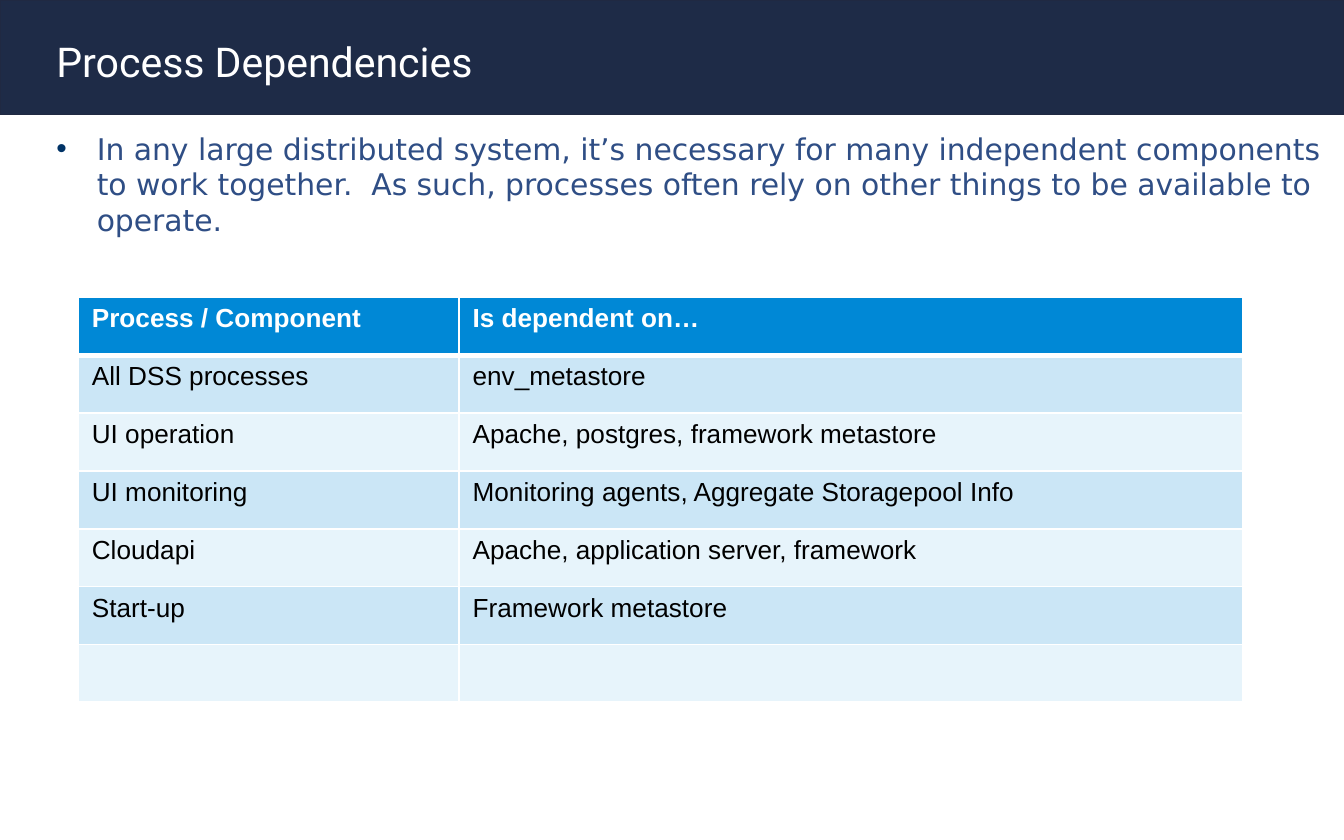
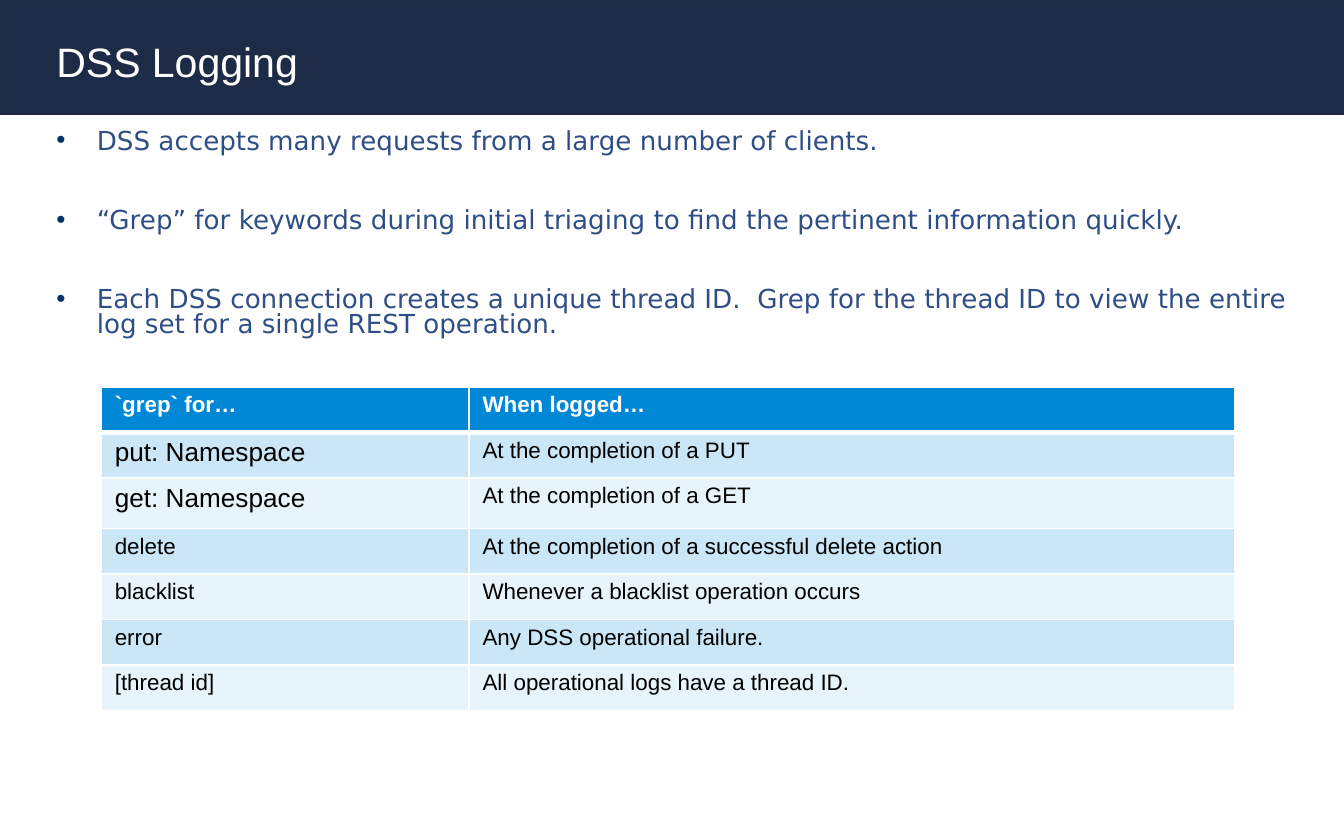
from lxml.etree import SubElement as Sub
from pptx import Presentation
from pptx.dml.color import RGBColor
from pptx.enum.shapes import MSO_SHAPE as Shape
from pptx.enum.text import MSO_ANCHOR as Anchor
from pptx.oxml.ns import qn
from pptx.util import Pt

WIDTH, HEIGHT = 720, 450
LEFT = 30.24
INDENT = 21.6
NAVY, EDGE, WHITE, BLACK = "1E2B47", "202942", "FFFFFF", "000000"
BODY, DOT = "2F4E85", "003366"
HEAD, BANDS = "0088D6", ("E7F4FB", "CBE6F6")

DEPENDS = [
    ("Process / Component", "Is dependent on…"),
    ("All DSS processes", "env_metastore"),
    ("UI operation", "Apache, postgres, framework metastore"),
    ("UI monitoring", "Monitoring agents, Aggregate Storagepool Info"),
    ("Cloudapi", "Apache, application server, framework"),
    ("Start-up", "Framework metastore"),
    ("", ""),
]
LOGS = [
    ("`grep` for…", "When logged…"),
    ("put: Namespace", "At the completion of a PUT"),
    ("get: Namespace", "At the completion of a GET"),
    ("delete", "At the completion of a successful delete action"),
    ("blacklist", "Whenever a blacklist operation occurs"),
    ("error", "Any DSS operational failure."),
    ("[thread id]", "All operational logs have a thread ID."),
]


def paint(color, value):
    color.rgb = RGBColor.from_string(value)


def fill(item, value):
    item.fill.solid()
    paint(item.fill.fore_color, value)


def style(font, face, size, color, bold=False):
    font.name, font.size, font.bold = face, Pt(size), bold
    paint(font.color, color)


def add_box(slide, left, top, width, height):
    """Add a wrapping text box without insets and return its frame."""
    frame = slide.shapes.add_textbox(
        Pt(left), Pt(top), Pt(width), Pt(height)).text_frame
    frame.word_wrap = True
    frame.margin_left = frame.margin_right = 0
    frame.margin_top = frame.margin_bottom = 0
    return frame


def add_page(deck, title, face):
    """Add a blank slide with the dark band and its title."""
    slide = deck.slides.add_slide(deck.slide_layouts[6])
    band = slide.shapes.add_shape(
        Shape.ROUNDED_RECTANGLE, 0, 0, Pt(WIDTH), Pt(61.2))
    band.adjustments[0] = 0
    band.shadow.inherit = False
    fill(band, NAVY)
    paint(band.line.color, EDGE)
    band.line.width = Pt(0.75)
    frame = add_box(slide, LEFT, 5.04, 475.2, 54)
    frame.vertical_anchor = Anchor.MIDDLE
    frame.text = title
    para = frame.paragraphs[0]
    para.line_spacing = 1.04
    style(para.runs[0].font, face, 22, WHITE)
    return slide


def add_dot(para):
    """Give a paragraph a hanging bullet."""
    props = para._p.get_or_add_pPr()
    props.set("marL", str(Pt(INDENT)))
    props.set("indent", str(-Pt(INDENT)))
    Sub(Sub(props, qn("a:buClr")), qn("a:srgbClr"), val=DOT)
    Sub(props, qn("a:buFont"), typeface="Arial")
    Sub(props, qn("a:buChar"), char="•")


def add_points(slide, lines, size, pitch=1.0, gap=0):
    frame = add_box(slide, LEFT, 69.84, 678.24, 354.96)
    frame.text = "\n".join(lines)
    for i, para in enumerate(frame.paragraphs):
        add_dot(para)
        para.line_spacing = pitch
        para.space_before = Pt(gap if i else 0)
        style(para.runs[0].font, "DejaVu Sans", size, BODY)


def add_edges(cell, row):
    """Draw white cell borders, thick between header and body."""
    props = cell._tc.get_or_add_tcPr()
    for side in "LRTB":
        thick = (row, side) in ((0, "B"), (1, "T"))
        line = Sub(props, qn(f"a:ln{side}"), w=str(Pt(3 if thick else 1)))
        Sub(Sub(line, qn("a:solidFill")), qn("a:srgbClr"), val=WHITE)


def add_grid(slide, rows, left, top, cols, heights, size, inset, large=()):
    """Add a banded table; large holds (row, column) of 14 pt cells."""
    grid = slide.shapes.add_table(
        len(rows), len(cols), Pt(left), Pt(top),
        Pt(sum(cols)), Pt(sum(heights))).table
    for col, width in zip(grid.columns, cols):
        col.width = Pt(width)
    for r, (texts, height) in enumerate(zip(rows, heights)):
        grid.rows[r].height = Pt(height)
        for c, text in enumerate(texts):
            cell = grid.cell(r, c)
            cell.margin_left = cell.margin_right = Pt(7.2)
            cell.margin_top = cell.margin_bottom = Pt(inset)
            add_edges(cell, r)
            fill(cell, BANDS[r % 2] if r else HEAD)
            cell.text = text
            style(cell.text_frame.paragraphs[0].font, "Arial",
                  14 if (r, c) in large else size,
                  BLACK if r else WHITE, bold=r == 0)


def main():
    deck = Presentation()
    deck.slide_width, deck.slide_height = Pt(WIDTH), Pt(HEIGHT)

    slide = add_page(deck, "Process Dependencies", "Roboto")
    add_points(slide, [
        "In any large distributed system, it’s necessary for many independent "
        "components to work together.  As such, processes often rely on other "
        "things to be available to operate.",
    ], 16)
    add_grid(slide, DEPENDS, 42, 159.3, (204, 420), [31] * 7, 14, 3.6)

    slide = add_page(deck, "DSS Logging", "Arial")
    add_points(slide, [
        "DSS accepts many requests from a large number of clients.",
        "“Grep” for keywords during initial triaging to find the pertinent "
        "information quickly.",
        "Each DSS connection creates a unique thread ID.  Grep for the thread "
        "ID to view the entire log set for a single REST operation.",
    ], 14, pitch=0.8, gap=29)
    heights = [24.4] * 2 + [27.2] + [24.4] * 4
    add_grid(slide, LOGS, 54.3, 207.2, (197, 410), heights, 12, 3,
             large=((1, 0), (2, 0)))

    deck.save("out.pptx")


if __name__ == "__main__":
    main()
